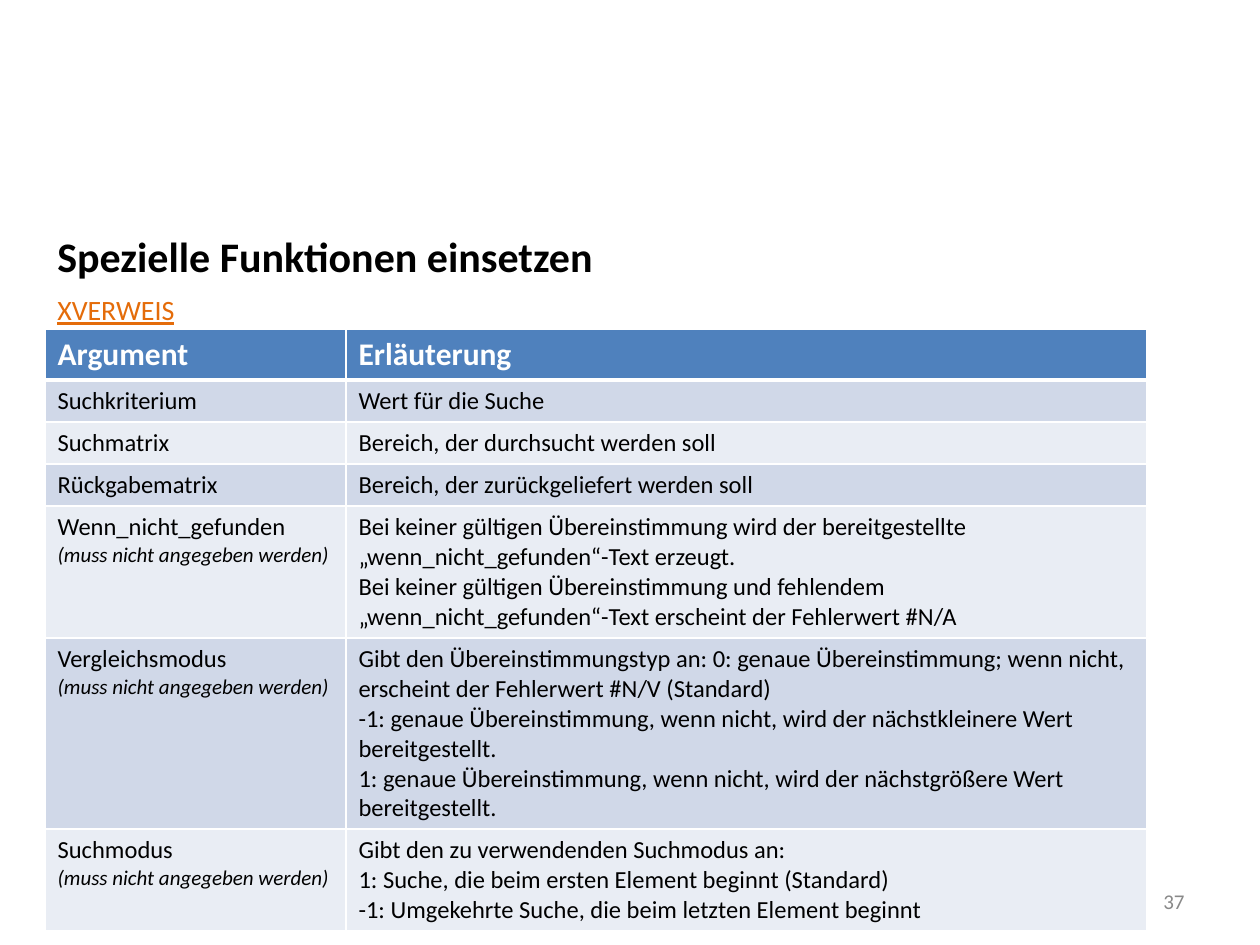
from lxml.etree import SubElement
from pptx import Presentation
from pptx.dml.color import RGBColor
from pptx.enum.text import MSO_ANCHOR, PP_ALIGN
from pptx.oxml.ns import qn
from pptx.util import Emu, Pt

PX_PER_INCH = 126
COLORS = {
    "white": "FFFFFF", "black": "000000", "orange": "E46C0A", "gray": "898989",
    "header": "4F81BD", "odd": "D0D8E8", "even": "E9EDF4",
}
OPTIONAL = ("(muss nicht angegeben werden)", {"size": 12, "italic": True})

# Each cell is a list of paragraphs, each paragraph a list of (text, format) runs
ROWS = [
    ([["Argument"]], [["Erläuterung"]]),
    ([["Suchkriterium"]], [["Wert für die Suche"]]),
    ([["Suchmatrix"]], [["Bereich, der durchsucht werden soll"]]),
    ([["Rückgabematrix"]], [["Bereich, der zurückgeliefert werden soll"]]),
    ([["Wenn_nicht_gefunden ", OPTIONAL]],
     [["Bei keiner gültigen Übereinstimmung wird der bereitgestellte "
       "„wenn_nicht_gefunden“-Text erzeugt."],
      ["Bei keiner gültigen Übereinstimmung und fehlendem "
       "„wenn_nicht_gefunden“-Text erscheint der Fehlerwert #N/A"]]),
    ([["Vergleichsmodus"], [OPTIONAL]],
     [["Gibt den Übereinstimmungstyp an: 0: genaue Übereinstimmung; wenn nicht, "
       "erscheint der Fehlerwert #N/V (Standard)"],
      ["-1: genaue Übereinstimmung, wenn nicht, wird der nächstkleinere Wert "
       "bereitgestellt."],
      ["1: genaue Übereinstimmung, wenn nicht, wird der nächstgrößere Wert "
       "bereitgestellt."]]),
    ([["Suchmodus"], [OPTIONAL]],
     [["Gibt den zu verwendenden Suchmodus an:"],
      ["1: Suche, die beim ersten Element beginnt (Standard)"],
      ["-1: Umgekehrte Suche, die beim letzten Element beginnt"]]),
]
COLUMN_WIDTHS = [301, 801]
ROW_HEIGHTS = [51, 42, 42, 42, 132, 191, 102]


def px(value):
    return Emu(round(value * 914400 / PX_PER_INCH))


def rgb(name):
    return RGBColor.from_string(COLORS[name])


def write_run(paragraph, text, size=14, color="black", bold=False, italic=False,
              underline=False):
    run = paragraph.add_run()
    run.text = text
    font = run.font
    font.name, font.size = "Calibri", Pt(size)
    font.bold, font.italic, font.underline = bold, italic, underline
    font.color.rgb = rgb(color)


def write_paragraphs(text_frame, paragraphs, align=PP_ALIGN.LEFT, **style):
    text_frame.word_wrap = True
    for index, runs in enumerate(paragraphs):
        paragraph = text_frame.add_paragraph() if index else text_frame.paragraphs[0]
        paragraph.alignment = align
        for run in runs:
            text, extra = (run, {}) if isinstance(run, str) else run
            write_run(paragraph, text, **{**style, **extra})


def add_text(slide, box, text, anchor=MSO_ANCHOR.TOP, **style):
    shape = slide.shapes.add_textbox(*map(px, box))
    shape.text_frame.vertical_anchor = anchor
    write_paragraphs(shape.text_frame, [[text]], **style)


def add_borders(cell, widths):
    properties = cell._tc.get_or_add_tcPr()
    for index, (side, points) in enumerate(widths.items()):
        line = SubElement(properties, qn(f"a:ln{side}"), w=str(Pt(points)))
        fill = SubElement(line, qn("a:solidFill"))
        SubElement(fill, qn("a:srgbClr"), val=COLORS["white"])
        properties.insert(index, line)  # borders precede the cell fill


def add_heading(slide, left, top, width):
    add_text(slide, (left, top, width, 47), "Spezielle Funktionen einsetzen",
             size=24, bold=True)
    add_text(slide, (left, top + 62, width, 44), "XVERWEIS",
             size=16, color="orange", underline=True)


def add_argument_table(slide, left, top):
    frame = slide.shapes.add_table(
        len(ROWS), len(COLUMN_WIDTHS), px(left), px(top),
        px(sum(COLUMN_WIDTHS)), px(sum(ROW_HEIGHTS)))
    table = frame.table
    for column, width in zip(table.columns, COLUMN_WIDTHS):
        column.width = px(width)
    for index, (row, height, contents) in enumerate(zip(table.rows, ROW_HEIGHTS, ROWS)):
        row.height = px(height)
        is_header = index == 0
        fill = "header" if is_header else ("odd" if index % 2 else "even")
        style = {"size": 18, "color": "white", "bold": True} if is_header else {}
        for cell, paragraphs in zip(row.cells, contents):
            cell.fill.solid()
            cell.fill.fore_color.rgb = rgb(fill)
            add_borders(cell, {"L": 1, "R": 1, "T": 3 if index == 1 else 1,
                               "B": 3 if is_header else 1})
            write_paragraphs(cell.text_frame, paragraphs, **style)


def add_page_number(slide, left, top, width, height):
    add_text(slide, (left, top, width, height), "37", anchor=MSO_ANCHOR.MIDDLE,
             align=PP_ALIGN.RIGHT, size=12, color="gray")


def main():
    presentation = Presentation()
    presentation.slide_width, presentation.slide_height = px(1260), px(945)
    slide = presentation.slides.add_slide(presentation.slide_layouts[6])

    # Title and function name
    add_heading(slide, 45, 224, 1134)
    # Page number
    add_page_number(slide, 903, 876, 294, 50)
    # Arguments and their meaning
    add_argument_table(slide, 45, 329)

    presentation.save("out.pptx")


if __name__ == "__main__":
    main()
